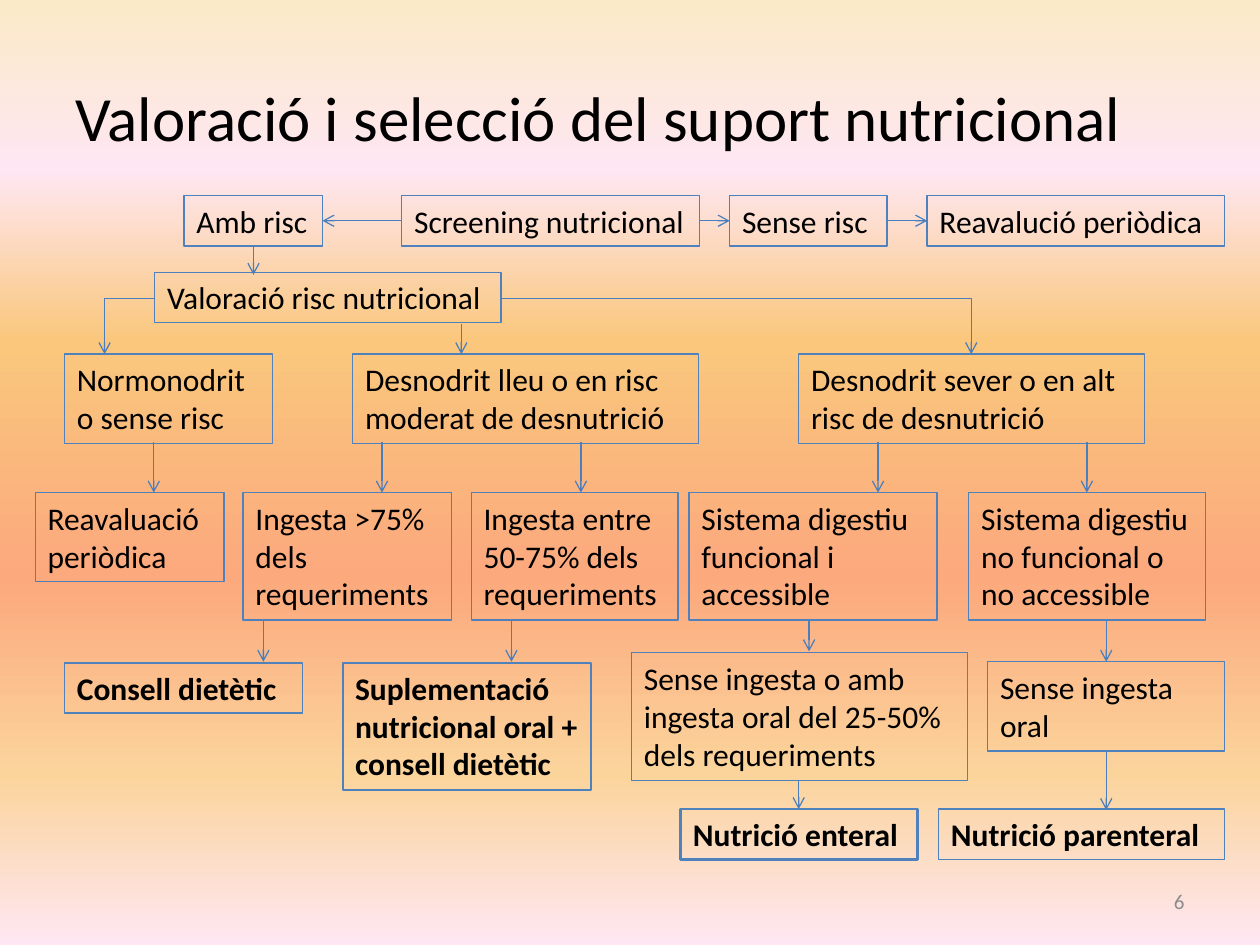
from copy import deepcopy

from lxml import etree
from pptx import Presentation
from pptx.dml.color import RGBColor
from pptx.enum import shapes, text
from pptx.oxml import ns
from pptx.util import Cm, Pt

BLACK = RGBColor(0x00, 0x00, 0x00)
GREY = RGBColor(0x8C, 0x8C, 0x8C)
BOX_BLUE = RGBColor(0x4F, 0x81, 0xBD)
ARROW_BLUE = RGBColor(0x4B, 0x7E, 0xBC)
SUNSET = [
    (0, RGBColor(0xFB, 0xEA, 0xC7)),
    (0.18, RGBColor(0xFE, 0xE7, 0xF2)),
    (0.36, RGBColor(0xFA, 0xC7, 0x7D)),
    (0.61, RGBColor(0xFB, 0xA9, 0x7D)),
    (0.82, RGBColor(0xFB, 0xD4, 0x9C)),
    (1, RGBColor(0xFE, 0xE7, 0xF2)),
]


def write(paragraph, words, size, color=BLACK, bold=False):
    run = paragraph.add_run()
    run.text = words
    run.font.name = "Calibri"
    run.font.size = Pt(size)
    run.font.color.rgb = color
    run.font.bold = bold


def arrow(kind, x1, y1, x2, y2):
    link = slide.shapes.add_connector(kind, Cm(x1), Cm(y1), Cm(x2), Cm(y2))
    link.line.color.rgb = ARROW_BLUE
    link.line.width = Pt(0.75)
    etree.SubElement(link.line._get_or_add_ln(), ns.qn("a:tailEnd"), type="arrow")
    properties = link._element.spPr
    etree.SubElement(properties, ns.qn("a:effectLst"))
    if kind == shapes.MSO_CONNECTOR.ELBOW:
        properties.find(ns.qn("a:prstGeom")).set("prst", "bentConnector2")


deck = Presentation()
deck.slide_width, deck.slide_height = Cm(25.4), Cm(19.05)
slide = deck.slides.add_slide(deck.slide_layouts[5])

# Background: vertical gradient
backdrop = slide.background.fill
backdrop.gradient()
backdrop.gradient_angle = 270
stop_list = backdrop._fill._gradFill.find(ns.qn("a:gsLst"))
while len(stop_list) < len(SUNSET):
    stop_list.append(deepcopy(stop_list[0]))
for stop, (position, color) in zip(backdrop.gradient_stops, SUNSET):
    stop.position = position
    stop.color.rgb = color

# Title
title = slide.shapes.title
title.left, title.top, title.width, title.height = Cm(1.27), Cm(0.76), Cm(22.86), Cm(3.18)
title.text_frame.vertical_anchor = text.MSO_ANCHOR.MIDDLE
heading = title.text_frame.paragraphs[0]
heading.alignment = text.PP_ALIGN.LEFT
write(heading, "Valoració i selecció del suport nutricional", 36)

# Page number
page = slide.shapes.add_textbox(Cm(18.2), Cm(17.66), Cm(5.93), Cm(1.01)).text_frame
page.vertical_anchor = text.MSO_ANCHOR.MIDDLE
page.paragraphs[0].alignment = text.PP_ALIGN.RIGHT
write(page.paragraphs[0], "6", 12, GREY)

# Boxes by row: left, top, width, number of lines, wording
LINE_HEIGHT = {1: 1.02, 2: 1.8, 3: 2.57}
screening, risk, diagnosis, intake, support, route = 3.94, 5.49, 7.14, 9.93, 13.36, 16.31
steps = [
    (8.1, screening, 6, 1, "Screening nutricional"),
    (14.71, screening, 3.17, 1, "Sense risc"),
    (18.69, screening, 6, 1, "Reavalució periòdica"),
    (3.71, screening, 2.79, 1, "Amb risc"),
    (3.12, risk, 6.98, 1, "Valoració risc nutricional"),
    (1.3, diagnosis, 4.2, 2, "Normonodrit o sense risc"),
    (7.11, diagnosis, 6.98, 2, "Desnodrit lleu o en risc moderat de desnutrició"),
    (16.1, diagnosis, 6.98, 2, "Desnodrit sever o en alt risc de desnutrició"),
    (0.71, intake, 3.81, 2, "Reavaluació periòdica"),
    (4.9, intake, 4.2, 3, "Ingesta >75% dels requeriments"),
    (9.5, intake, 4.17, 3, "Ingesta entre 50-75% dels requeriments"),
    (13.89, intake, 5, 3, "Sistema digestiu funcional i accessible"),
    (19.53, intake, 4.78, 3, "Sistema digestiu no funcional o no accessible"),
    (19.91, 13.34, 4.78, 2, "Sense ingesta oral"),
    (12.73, 13.16, 6.78, 3, "Sense ingesta o amb ingesta oral del 25-50% dels requeriments"),
]
treatments = [
    (1.3, support, 4.8, 1, "Consell dietètic", 1),
    (6.91, support, 5, 3, "Suplementació nutricional oral + consell dietètic", 1),
    (13.72, route, 4.78, 1, "Nutrició enteral", 1.5),
    (18.92, route, 5.77, 1, "Nutrició parenteral", 0.75),
]
for left, top, width, lines, words, border in [(*step, 0.75) for step in steps] + treatments:
    box = slide.shapes.add_textbox(Cm(left), Cm(top), Cm(width), Cm(LINE_HEIGHT[lines]))
    box.line.color.rgb = BOX_BLUE
    box.line.width = Pt(border)
    box.text_frame.word_wrap = True
    box.text_frame.auto_size = text.MSO_AUTO_SIZE.SHAPE_TO_FIT_TEXT
    write(box.text_frame.paragraphs[0], words, 18, bold=(left, top, width, lines, words, border) in treatments)

# Arrows along the screening row
for start, end in [(8.1, 6.5), (14.1, 14.71), (17.88, 18.69)]:
    arrow(shapes.MSO_CONNECTOR.STRAIGHT, start, 4.45, end, 4.45)

# Arrows down to the next row: top, bottom, horizontal positions
for top, bottom, columns in [
    (4.95, 5.54, [5.11]),
    (6.53, 7.14, [9.3]),
    (8.92, 9.93, [3.1, 7.7, 11.71, 17.7, 21.91]),
    (12.52, 13.34, [5.31, 10.31, 22.3]),
    (12.52, 13.13, [16.31]),
    (15.72, 16.31, [16.1]),
    (15.11, 16.33, [22.3]),
]:
    for x in columns:
        arrow(shapes.MSO_CONNECTOR.STRAIGHT, x, top, x, bottom)

# Bent arrows from the risk assessment to the outer diagnoses
for start, end in [(3.12, 2.11), (10.11, 19.58)]:
    arrow(shapes.MSO_CONNECTOR.ELBOW, start, 6.02, end, 7.14)

deck.save("out.pptx")
